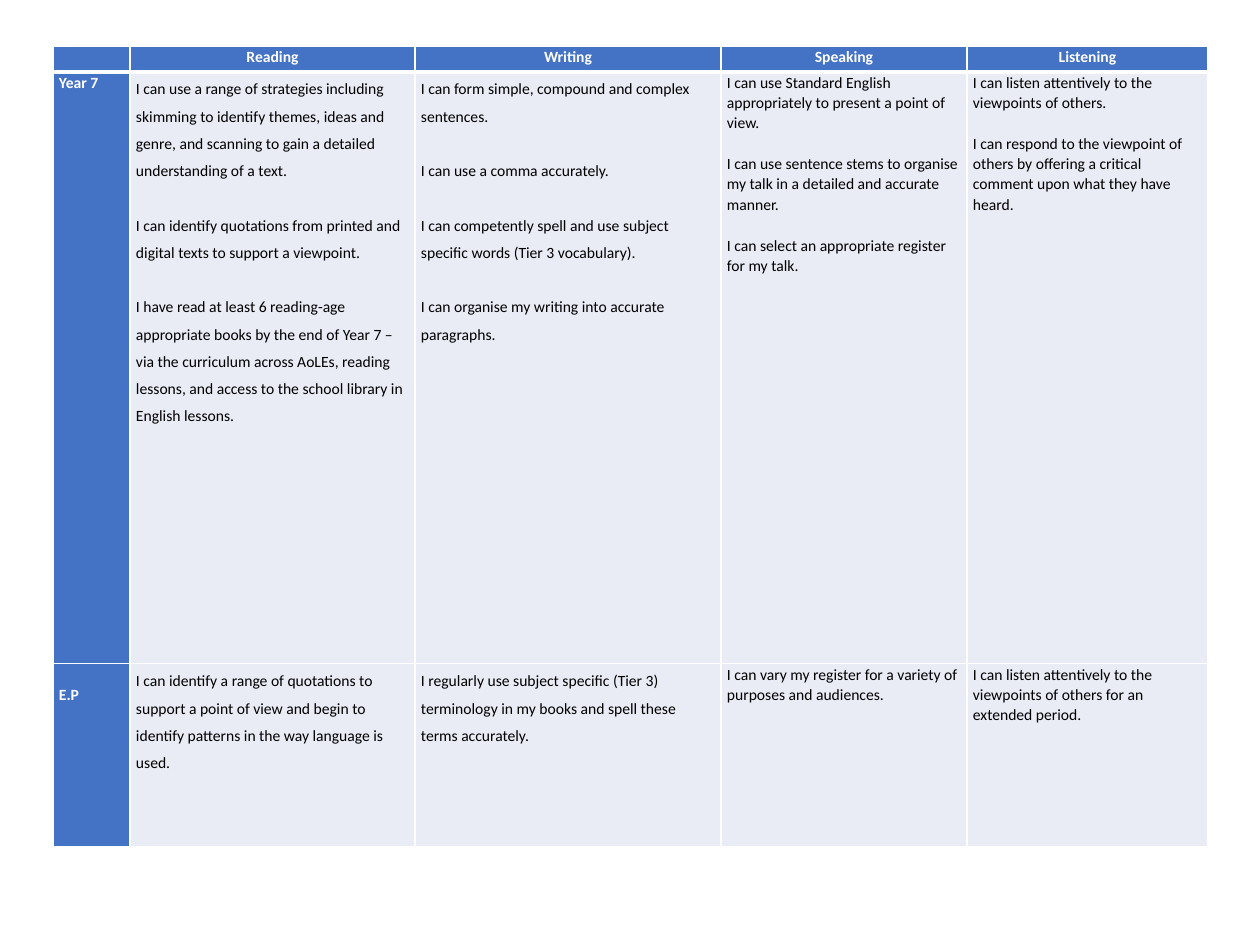
import pptx
import pptx.dml.color
import pptx.enum.text
import pptx.oxml
import pptx.oxml.ns
import pptx.util

# Content: each cell is a list of paragraphs
SKILLS = ["Reading", "Writing", "Speaking", "Listening"]
STAGES = [
    ("Year 7", [
        ["I can use a range of strategies including skimming to identify themes, ideas and genre, "
         "and scanning to gain a detailed understanding of a text.",
         "I can identify quotations from printed and digital texts to support a viewpoint.",
         "I have read at least 6 reading-age appropriate books by the end of Year 7 – via the "
         "curriculum across AoLEs, reading lessons, and access to the school library in English "
         "lessons."],
        ["I can form simple, compound and complex sentences.",
         "I can use a comma accurately.",
         "I can competently spell and use subject specific words (Tier 3 vocabulary).",
         "I can organise my writing into accurate paragraphs."],
        ["I can use Standard English appropriately to present a point of view.",
         "I can use sentence stems to organise my talk in a detailed and accurate manner.",
         "I can select an appropriate register for my talk."],
        ["I can listen attentively to the viewpoints of others.",
         "I can respond to the viewpoint of others by offering a critical comment upon what they "
         "have heard."],
    ]),
    ("E.P", [
        ["I can identify a range of quotations to support a point of view and begin to identify "
         "patterns in the way language is used."],
        ["I regularly use subject specific (Tier 3) terminology in my books and spell these terms "
         "accurately."],
        ["I can vary my register for a variety of purposes and audiences."],
        ["I can listen attentively to the viewpoints of others for an extended period."],
    ]),
]

# Layout in px, 90 to the inch
PX = 914400 // 90
SLIDE = (1260, 945)
LEFT, TOP = 53, 46
COLUMNS = [77, 285, 306, 246, 241]
ROWS = [26, 592, 183]
INSET = 6
STAGE_TOPS = [0, 0, 20]
WIDE_COLUMNS = (1, 2)  # reading and writing have open line spacing

BLUE, PALE, WHITE, BLACK = "4472C4", "E9EBF5", "FFFFFF", "000000"
SIZE = pptx.util.Pt(12.5)
TIGHT, OPEN = 1.07, pptx.util.Pt(21.8)
TIGHT_GAP = pptx.util.Pt(16.3)


def rgb(value):
    return pptx.dml.color.RGBColor.from_string(value)


def write(cell, paragraphs, *, color=BLACK, bold=False, centred=False,
          spacing=TIGHT, gap=TIGHT_GAP, top=0):
    cell.margin_left = cell.margin_right = INSET * PX
    cell.margin_top, cell.margin_bottom = top * PX, 0
    frame = cell.text_frame
    for index, words in enumerate(paragraphs):
        paragraph = frame.add_paragraph() if index else frame.paragraphs[0]
        paragraph.line_spacing = spacing
        paragraph.space_before = gap if index else 0
        if centred:
            paragraph.alignment = pptx.enum.text.PP_ALIGN.CENTER
        run = paragraph.add_run()
        run.text = words
        run.font.name, run.font.size, run.font.bold = "Calibri", SIZE, bold
        run.font.color.rgb = rgb(color)


def paint(cell, fill, top=1, bottom=1):
    properties = cell._tc.get_or_add_tcPr()
    for side, points in (("L", 1), ("R", 1), ("T", top), ("B", bottom)):
        properties.append(pptx.oxml.parse_xml(
            f'<a:ln{side} {pptx.oxml.ns.nsdecls("a")} w="{points * 12700}"><a:solidFill>'
            f'<a:srgbClr val="{WHITE}"/></a:solidFill></a:ln{side}>'))
    cell.fill.solid()
    cell.fill.fore_color.rgb = rgb(fill)


deck = pptx.Presentation()
deck.slide_width, deck.slide_height = (side * PX for side in SLIDE)
slide = deck.slides.add_slide(deck.slide_layouts[6])

# Table grid
skills_table = slide.shapes.add_table(
    len(ROWS), len(COLUMNS), LEFT * PX, TOP * PX, sum(COLUMNS) * PX, sum(ROWS) * PX).table
for column, width in zip(skills_table.columns, COLUMNS):
    column.width = width * PX
for row, height in zip(skills_table.rows, ROWS):
    row.height = height * PX

# Header row; the empty corner keeps the small text size so the row stays low
corner = skills_table.cell(0, 0)
write(corner, [])
corner.text_frame.paragraphs[0]._p.get_or_add_endParaRPr().set("sz", "1250")
paint(corner, BLUE, bottom=3)
for c, skill in enumerate(SKILLS, 1):
    heading = skills_table.cell(0, c)
    write(heading, [skill], color=WHITE, bold=True, centred=True)
    paint(heading, BLUE, bottom=3)

# Stage rows
for r, (stage, statements) in enumerate(STAGES, 1):
    rule = 3 if r == 1 else 1
    label = skills_table.cell(r, 0)
    write(label, [stage], color=WHITE, bold=True, top=STAGE_TOPS[r])
    paint(label, BLUE, top=rule)
    for c, paragraphs in enumerate(statements, 1):
        statement = skills_table.cell(r, c)
        if c in WIDE_COLUMNS:
            write(statement, paragraphs, spacing=OPEN, gap=OPEN)
        else:
            write(statement, paragraphs)
        paint(statement, PALE, top=rule)

deck.save("out.pptx")
